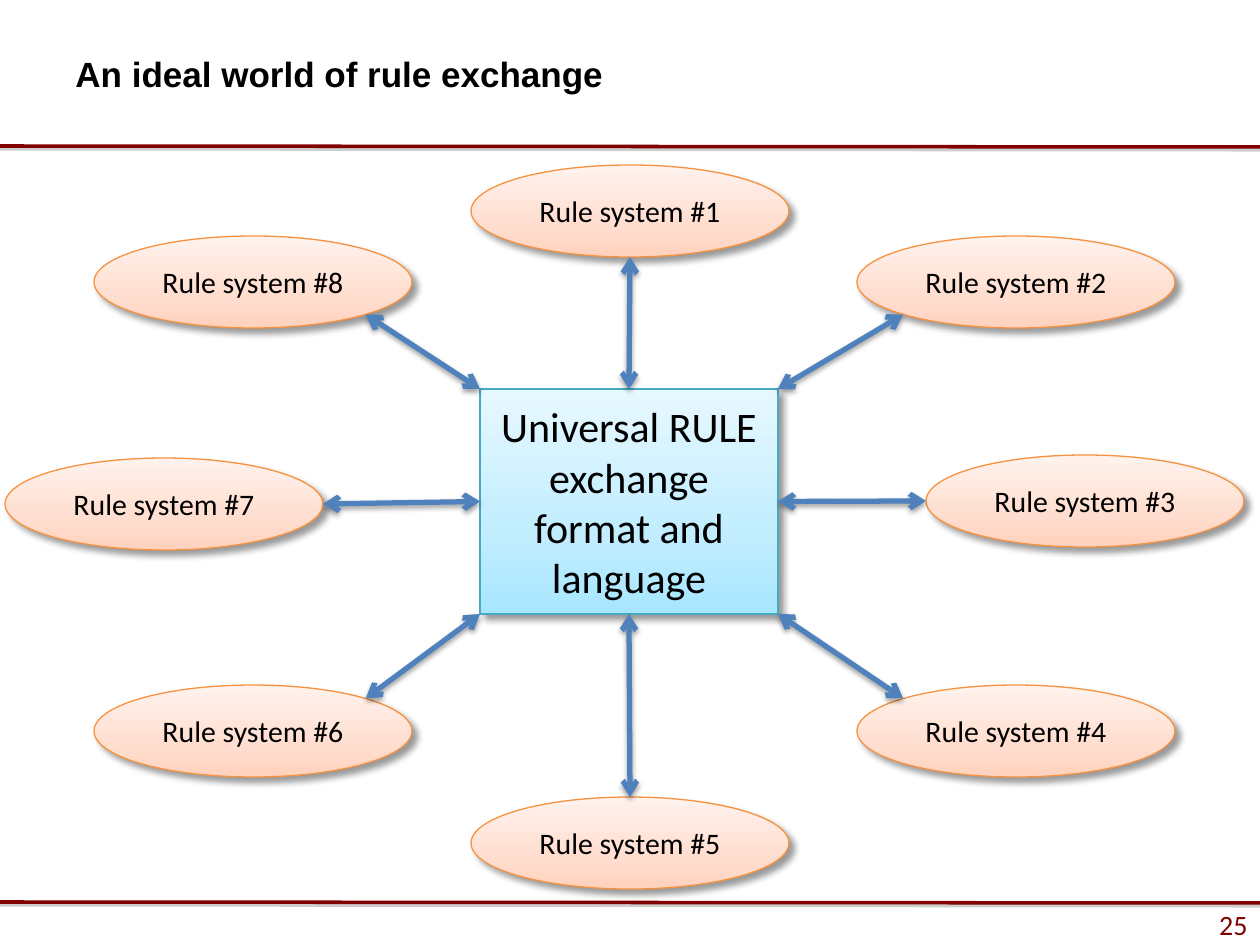
from lxml import etree
from pptx import Presentation
from pptx import util as u
from pptx.dml.color import RGBColor
from pptx.enum import shapes, text
from pptx.oxml import ns

PX_PER_INCH = 126
COLORS = {
    "white": "FFFFFF", "black": "000000", "maroon": "800000",
    "rule_shadow": "808080", "arrow": "4F81BD",
    "hub_line": "46AAC5", "system_line": "F69240",
}
HUB_GRADIENT = [(0, "A7E6FF"), (35, "C1EDFF"), (100, "E7F8FF")]
SYSTEM_GRADIENT = [(0, "FFD2BD"), (35, "FFDED0"), (100, "FFF2ED")]


def px(length):
    return u.Inches(length / PX_PER_INCH)


def rgb(name):
    return RGBColor.from_string(COLORS[name])


def add_xml(parent, tag, **attributes):
    return etree.SubElement(parent, ns.qn(tag), {k: str(v) for k, v in attributes.items()})


class Deck:
    """Holds the slide and its shared style."""

    font = "Calibri"

    def __init__(self, width, height):
        self.prs = Presentation()
        self.prs.slide_width, self.prs.slide_height = px(width), px(height)
        self.slide = self.prs.slides.add_slide(self.prs.slide_layouts[6])

    def set_text(self, shape, words, size, color="black", align=text.PP_ALIGN.CENTER,
                 font=None, bold=False, wrap=True):
        frame = shape.text_frame
        frame.word_wrap = wrap
        frame.vertical_anchor = text.MSO_ANCHOR.MIDDLE
        paragraph = frame.paragraphs[0]
        paragraph.text = words
        paragraph.alignment = align
        paragraph.font.name = font or self.font
        paragraph.font.size = u.Pt(size)
        paragraph.font.bold = bold
        paragraph.font.color.rgb = rgb(color)

    def shadow(self, shape, color, alpha, blur, distance, angle):
        properties = shape._element.spPr
        effects = properties.find(ns.qn("a:effectLst"))
        if effects is None:
            effects = add_xml(properties, "a:effectLst")
        outer = add_xml(effects, "a:outerShdw", blurRad=u.Pt(blur), dist=u.Pt(distance),
                        dir=angle * 60000, algn="ctr", rotWithShape=0)
        tint = add_xml(outer, "a:srgbClr", val=COLORS[color])
        add_xml(tint, "a:alpha", val=alpha * 1000)

    def label(self, box, words, size, **style):
        self.set_text(self.slide.shapes.add_textbox(*map(px, box)), words, size, **style)

    def footer(self, box, words, size, **style):
        bar = self.slide.shapes.add_shape(shapes.MSO_SHAPE.RECTANGLE, *map(px, box))
        bar.shadow.inherit = False
        bar.fill.solid()
        bar.fill.fore_color.rgb = rgb("white")
        bar.line.fill.background()
        self.set_text(bar, words, size, **style)

    def node(self, kind, box, words, size, gradient, outline):
        node = self.slide.shapes.add_shape(kind, *map(px, box))
        node.shadow.inherit = False
        node.fill.gradient()
        node.fill.gradient_angle = 90
        stops = node._element.spPr.find(ns.qn("a:gradFill")).find(ns.qn("a:gsLst"))
        stops.clear()
        for position, color in gradient:
            stop = add_xml(stops, "a:gs", pos=position * 1000)
            add_xml(stop, "a:srgbClr", val=color)
        node.line.color.rgb = rgb(outline)
        node.line.width = u.Pt(0.75)
        self.shadow(node, "black", 40, 4, 4, 45)
        self.set_text(node, words, size)

    def line(self, start, end, color, width):
        line = self.slide.shapes.add_connector(
            shapes.MSO_CONNECTOR.STRAIGHT, *map(px, (*start, *end)))
        line.line.color.rgb = rgb(color)
        line.line.width = u.Pt(width)
        return line

    def divider(self, y):
        divider = self.line((0, y), (1260, y + 1), "maroon", 2)
        self.shadow(divider, "rule_shadow", 38, 0, 1.6, 90)

    def double_arrow(self, start, end):
        arrow = self.line(start, end, "arrow", 3)
        outline = arrow._element.spPr.find(ns.qn("a:ln"))
        for tip in ("a:headEnd", "a:tailEnd"):
            add_xml(outline, tip, type="arrow")
        self.shadow(arrow, "black", 38, 3.1, 1.6, 90)


def edge_point(box, direction, reach=1):
    """Point on the edge of a box, seen from its centre."""
    left, top, width, height = box
    dx, dy = direction
    return (left + width / 2 * (1 + dx * reach), top + height / 2 * (1 + dy * reach))


def main():
    deck = Deck(1260, 945)

    # Frame: page number, dividers and title
    deck.footer((0, 908, 1260, 32), "25", 16, color="maroon",
                align=text.PP_ALIGN.RIGHT, wrap=False)
    for y in (146, 902):
        deck.divider(y)
    deck.label((63, 42, 798, 63), "An ideal world of rule exchange", 20,
               align=text.PP_ALIGN.LEFT, font="Arial", bold=True)

    # Hub
    hub = (480, 389, 298, 225)
    deck.node(shapes.MSO_SHAPE.RECTANGLE, hub, "Universal RULE exchange format and language",
              24, HUB_GRADIENT, "hub_line")

    # Rule systems, clockwise from the top: left, top, direction from the hub
    systems = [
        (471, 165, (0, -1)), (857, 236, (1, -1)), (926, 455, (1, 0)), (857, 685, (1, 1)),
        (471, 797, (0, 1)), (94, 685, (-1, 1)), (5, 458, (-1, 0)), (94, 236, (-1, -1)),
    ]
    boxes = [(left, top, 318, 92) for left, top, _ in systems]
    for number, box in enumerate(boxes, 1):
        deck.node(shapes.MSO_SHAPE.OVAL, box, f"Rule system #{number}", 17,
                  SYSTEM_GRADIENT, "system_line")

    # Arrows between the hub and each system
    for box, (_, _, (dx, dy)) in zip(boxes, systems):
        reach = 0.71 if dx and dy else 1
        deck.double_arrow(edge_point(hub, (dx, dy)), edge_point(box, (-dx, -dy), reach))

    deck.prs.save("out.pptx")


if __name__ == "__main__":
    main()
